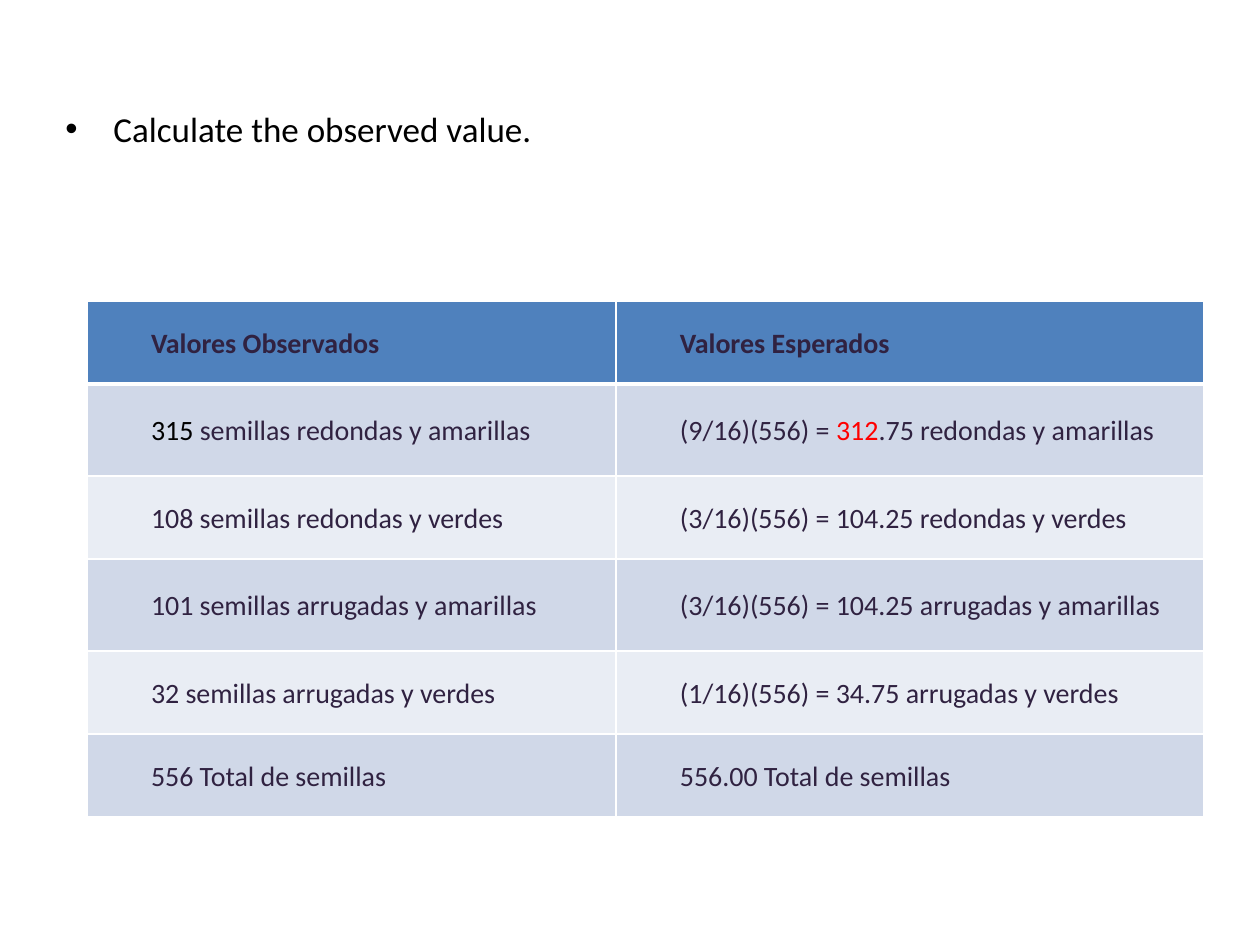
from dataclasses import dataclass

from pptx import Presentation
from pptx.dml.color import RGBColor
from pptx.enum.text import MSO_ANCHOR
from pptx.oxml.ns import qn
from pptx.slide import Slide
from pptx.table import _Cell
from pptx.util import Emu, Pt
from lxml import etree

MIDDLE = MSO_ANCHOR.MIDDLE
SCALE = 914400 // 126  # EMU in one px


@dataclass(frozen=True)
class Theme:
    font: str = "Calibri"
    black: str = "000000"
    white: str = "FFFFFF"
    ink: str = "302241"
    red: str = "FF0000"
    head: str = "4F81BD"
    bands: tuple[str, str] = ("D0D8E8", "E9EDF4")
    lead: int = 20
    body: int = 16
    thin: int = 1
    thick: int = 3


THEME = Theme()


@dataclass(frozen=True)
class Part:
    text: str
    color: str = THEME.ink


@dataclass(frozen=True)
class Row:
    height: int
    left: list[Part]
    right: list[Part]


LEAD = "Calculate the observed value."
LEFT, TOP = 87, 301
COLS = (529, 588)
LOW, HIGH = 83, 92
ROWS = [
    Row(LOW, [Part("Valores Observados")], [Part("Valores Esperados")]),
    Row(HIGH, [Part("315 ", THEME.black), Part("semillas redondas y amarillas")],
        [Part("(9/16)(556) = "), Part("312", THEME.red),
         Part(".75 redondas y amarillas")]),
    Row(LOW, [Part("108 semillas redondas y verdes")],
        [Part("(3/16)(556) = 104.25 redondas y verdes")]),
    Row(HIGH, [Part("101 semillas arrugadas y amarillas")],
        [Part("(3/16)(556) = 104.25 arrugadas y amarillas")]),
    Row(LOW, [Part("32 semillas arrugadas y verdes")],
        [Part("(1/16)(556) = 34.75 arrugadas y verdes")]),
    Row(LOW, [Part("556 Total de semillas")], [Part("556.00 Total de semillas")]),
]


def px(count: int) -> Emu:
    return Emu(count * SCALE)


def write(para, parts: list[Part], size: int, bold: bool = False) -> None:
    for part in parts:
        run = para.add_run()
        run.text = part.text
        font = run.font
        font.name, font.size, font.bold = THEME.font, Pt(size), bold
        font.color.rgb = RGBColor.from_string(part.color)


def indent(para, margin: int, first: int):
    props = para._p.get_or_add_pPr()
    props.set("marL", str(px(margin)))
    props.set("indent", str(px(first)))
    return props


def edge(cell: _Cell, side: str, width: int) -> None:
    props = cell._tc.get_or_add_tcPr()
    line = etree.SubElement(props, qn(f"a:ln{side}"), w=str(Pt(width)))
    fill = etree.SubElement(line, qn("a:solidFill"))
    etree.SubElement(fill, qn("a:srgbClr"), val=THEME.white)


def draw_lead(slide: Slide) -> None:
    box = slide.shapes.add_textbox(px(53), px(101), px(1164), px(591))
    frame = box.text_frame
    frame.word_wrap = True
    para = frame.paragraphs[0]
    props = indent(para, 48, -48)
    etree.SubElement(props, qn("a:buFont"), typeface="Arial")
    etree.SubElement(props, qn("a:buChar"), char="•")
    write(para, [Part(LEAD, THEME.black)], THEME.lead)


def draw_cell(cell: _Cell, parts: list[Part], index: int) -> None:
    cell.margin_left = cell.margin_right = px(1)
    cell.margin_top = cell.margin_bottom = px(1)
    cell.vertical_anchor = MIDDLE
    # The rule under the header is shared with the first body row
    heavy = {(0, "B"), (1, "T")}
    for side in "LRTB":
        edge(cell, side, THEME.thick if (index, side) in heavy else THEME.thin)
    color = THEME.bands[(index - 1) % 2] if index else THEME.head
    cell.fill.solid()
    cell.fill.fore_color.rgb = RGBColor.from_string(color)
    para = cell.text_frame.paragraphs[0]
    indent(para, 0, 63)
    para.line_spacing = 1.07
    write(para, parts, THEME.body, bold=index == 0)


def draw_table(slide: Slide) -> None:
    high = sum(row.height for row in ROWS)
    table = slide.shapes.add_table(
        len(ROWS), len(COLS), px(LEFT), px(TOP), px(sum(COLS)), px(high)).table
    for col, width in zip(table.columns, COLS):
        col.width = px(width)
    for index, row in enumerate(ROWS):
        table.rows[index].height = px(row.height)
        for place, parts in enumerate((row.left, row.right)):
            draw_cell(table.cell(index, place), parts, index)


def main() -> None:
    deck = Presentation()
    deck.slide_width, deck.slide_height = px(1260), px(945)
    slide = deck.slides.add_slide(deck.slide_layouts[6])
    # Bulleted lead above the table of seeds
    draw_lead(slide)
    draw_table(slide)
    deck.save("out.pptx")


if __name__ == "__main__":
    main()
